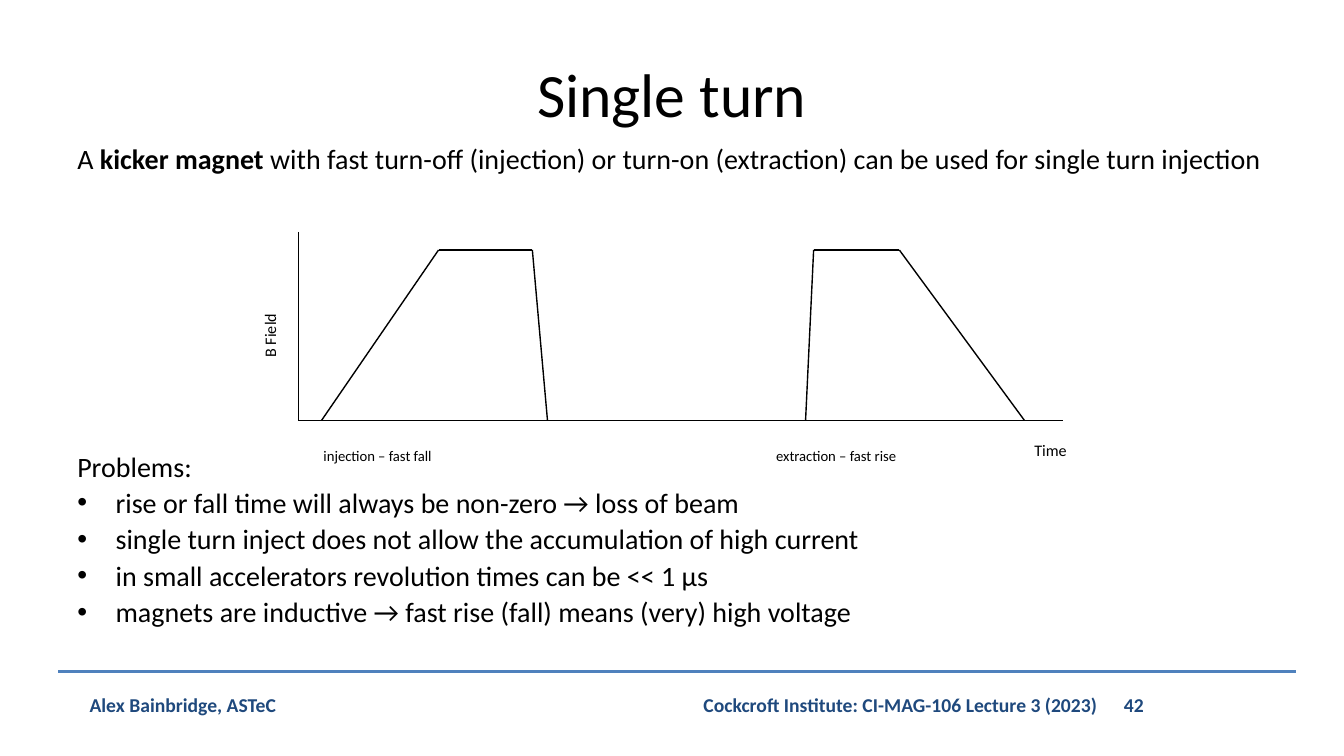
from itertools import pairwise
from lxml.etree import SubElement
from pptx import Presentation
from pptx.dml.color import RGBColor
from pptx.enum.shapes import MSO_CONNECTOR
from pptx.enum.text import MSO_ANCHOR, MSO_AUTO_SIZE, PP_ALIGN
from pptx.oxml.ns import qn
from pptx.util import Inches, Pt

BLACK = RGBColor(0x00, 0x00, 0x00)
NAVY = RGBColor(0x1F, 0x49, 0x7D)
BLUE = RGBColor(0x4F, 0x81, 0xBD)
WIDE, HIGH = 13.33, 7.5
EDGE = WIDE / 20


def style(para, size, color=BLACK, bold=None):
    """Give a whole paragraph its font, size, colour and weight."""
    font = para.font
    font.name, font.size, font.bold = "Calibri", Pt(size), bold
    font.color.rgb = color


def place(shape, left, top, width, height):
    """Move and size a shape, in inches."""
    shape.left, shape.top = Inches(left), Inches(top)
    shape.width, shape.height = Inches(width), Inches(height)


deck = Presentation()
deck.slide_width, deck.slide_height = Inches(WIDE), Inches(HIGH)
slide = deck.slides.add_slide(deck.slide_layouts[1])

# Title
title = slide.shapes.title
place(title, EDGE, 0.04 * HIGH, WIDE - 2 * EDGE, HIGH / 6)
title.text_frame.vertical_anchor = MSO_ANCHOR.MIDDLE
head = title.text_frame.paragraphs[0]
head.text, head.alignment = "Single turn", PP_ALIGN.CENTER
style(head, 44)

# Body: the space before "Problems:" leaves room for the graph
GRAPH_GAP, ROW_GAP, HANG = 196, 2, 0.38
intro = [
    ("A ", None),
    ("kicker magnet", True),
    (" with fast turn-off (injection) or turn-on (extraction)"
     " can be used for single turn injection", None),
]
problems = [
    "rise or fall time will always be non-zero → loss of beam",
    "single turn inject does not allow the accumulation of high current",
    "in small accelerators revolution times can be << 1 µs",
    "magnets are inductive → fast rise (fall) means (very) high voltage",
]
body = slide.placeholders[1]
place(body, EDGE, 0.18 * HIGH, WIDE - 2 * EDGE, 0.66 * HIGH)
frame = body.text_frame
frame.auto_size = MSO_AUTO_SIZE.NONE

first = frame.paragraphs[0]
for text, bold in intro:
    run = first.add_run()
    run.text, run.font.bold = text, bold
for text in ["Problems:", *problems]:
    frame.add_paragraph().text = text

gaps = [0, GRAPH_GAP] + [ROW_GAP] * len(problems)
for para, gap in zip(frame.paragraphs, gaps):
    para.space_before = Pt(gap)
    listed = para.text in problems
    hang = Inches(HANG) if listed else 0
    props = para._p.get_or_add_pPr()
    props.set("marL", str(hang))
    props.set("indent", str(-hang))
    if listed:
        SubElement(props, qn("a:buChar"), char="•")
    else:
        SubElement(props, qn("a:buNone"))
    style(para, 20)

# Lines: two axes, two field pulses and the footer rule
LEFT, RIGHT, TOP = 2.96, 10.54, 2.3
BASE, PEAK = 4.17, 2.48
FOOT = 6.66
lines = [
    ((LEFT, BASE), (RIGHT, BASE), BLACK, 0.75),
    ((LEFT, TOP), (LEFT, BASE), BLACK, 0.75),
    ((0.58, FOOT), (12.85, FOOT), BLUE, 2),
]
slow_rise = (3.19, 4.35, 5.28, 5.43)
fast_rise = (7.99, 8.07, 8.92, 10.16)
for times in (slow_rise, fast_rise):
    corners = zip(times, (BASE, PEAK, PEAK, BASE))
    lines += [(start, end, BLACK, 1) for start, end in pairwise(corners)]

for start, end, color, width in lines:
    ends = [Inches(v) for v in start + end]
    rule = slide.shapes.add_connector(MSO_CONNECTOR.STRAIGHT, *ends)
    rule.line.color.rgb, rule.line.width = color, Pt(width)
    SubElement(rule._element.spPr, qn("a:effectLst"))

# Labels of the graph and the footer
NOTE, AXIS, SMALL = 10.5, 11.5, 14
NOTE_TOP, FOOT_TOP = BASE + 0.1, FOOT + 0.16
START, MID = PP_ALIGN.LEFT, PP_ALIGN.CENTER
labels = [
    ("injection – fast fall", (3.11, NOTE_TOP, 2.32, 0.49), NOTE, BLACK, START, 0),
    ("extraction – fast rise", (7.6, NOTE_TOP, 2.56, 0.49), NOTE, BLACK, START, 0),
    ("Time", (10.16, 4.2, 1.01, 0.53), AXIS, BLACK, START, 0),
    ("B Field", (2.09, 2.83, 1.17, 0.46), AXIS, BLACK, START, 270),
    ("Alex Bainbridge, ASTeC", (0.79, FOOT_TOP, 5.14, 0.34), SMALL, NAVY, START, 0),
    ("Cockcroft Institute: CI-MAG-106 Lecture 3 (2023)\t42",
     (5.47, FOOT_TOP, 7.38, 0.34), SMALL, NAVY, MID, 0),
]
PAGE_TAB = 4.17
for text, spot, size, color, align, turn in labels:
    box = slide.shapes.add_textbox(*[Inches(v) for v in spot])
    box.rotation = turn
    box.text_frame.word_wrap = True
    box.text_frame.vertical_anchor = MSO_ANCHOR.MIDDLE
    para = box.text_frame.paragraphs[0]
    para.text, para.alignment = text, align
    if "\t" in text:
        tabs = SubElement(para._p.get_or_add_pPr(), qn("a:tabLst"))
        SubElement(tabs, qn("a:tab"), pos=str(Inches(PAGE_TAB)), algn="l")
    style(para, size, color, bold=color == NAVY)

deck.save("out.pptx")
